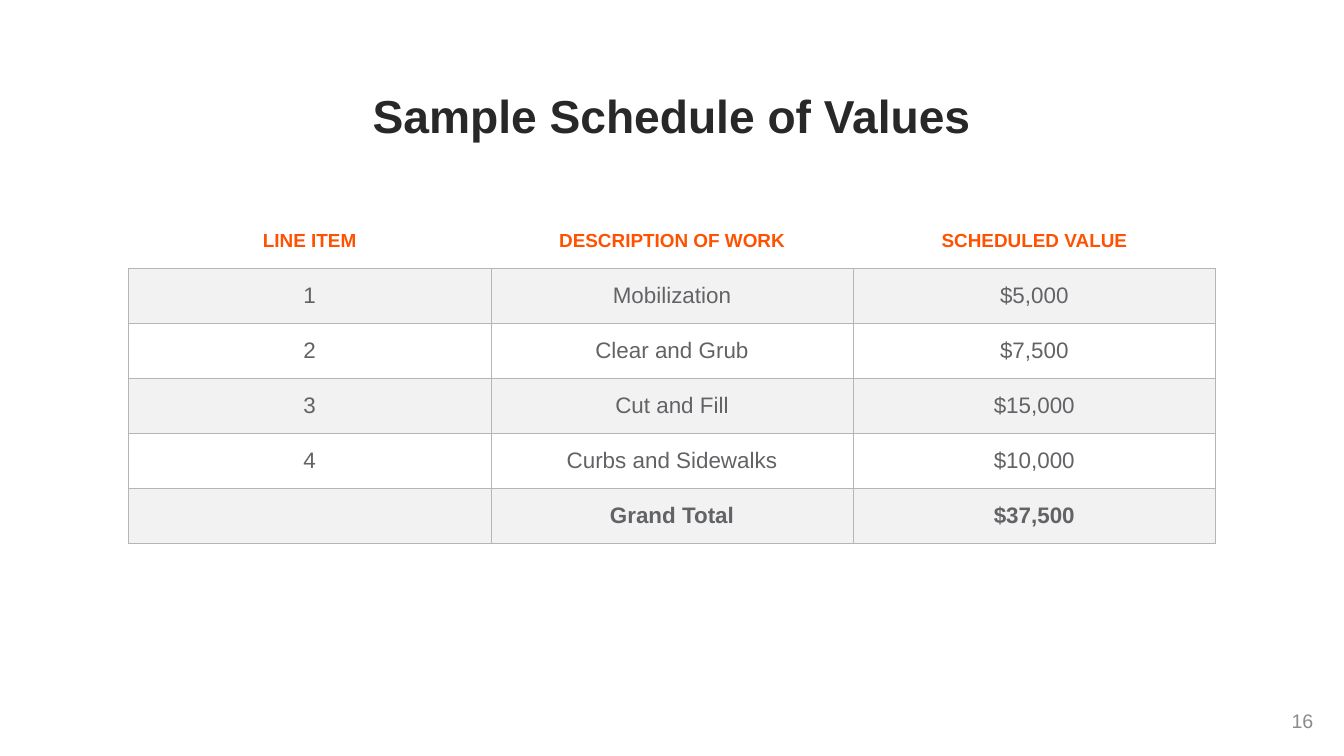
from lxml import etree
from pptx import Presentation
from pptx.dml.color import RGBColor
from pptx.enum.text import MSO_ANCHOR, PP_ALIGN
from pptx.oxml.ns import qn
from pptx.util import Inches, Pt

CENTER, RIGHT = PP_ALIGN.CENTER, PP_ALIGN.RIGHT
TOP, MIDDLE = MSO_ANCHOR.TOP, MSO_ANCHOR.MIDDLE
TITLE_ONLY = 5

COLORS = {
    "title": "282828",
    "header": "FF5200",
    "body": "626366",
    "number": "8B8B8B",
    "border": "B5B6B4",
    "band": "F2F2F2",
    "white": "FFFFFF",
}

HEADERS = ["LINE ITEM", "DESCRIPTION OF WORK", "SCHEDULED VALUE"]
ITEMS = [
    ["1", "Mobilization", "$5,000"],
    ["2", "Clear and Grub", "$7,500"],
    ["3", "Cut and Fill", "$15,000"],
    ["4", "Curbs and Sidewalks", "$10,000"],
    ["", "Grand Total", "$37,500"],
]


def rgb(name):
    return RGBColor.from_string(COLORS[name])


def write(tf, text, size, color, bold=False, align=CENTER, spacing=None, font="Arial"):
    p = tf.paragraphs[0]
    p.alignment = align
    if spacing:
        p.line_spacing = spacing
    p.font.size = Pt(size)
    if text:
        r = p.add_run()
        r.text = text
        r.font.name = font
        r.font.size = Pt(size)
        r.font.bold = bold
        r.font.color.rgb = rgb(color)


def set_borders(cell, sides, width=1):
    """Draw the named sides (L, R, T, B) and clear the others."""
    tc_pr = cell._tc.get_or_add_tcPr()
    for side in "LRTB":
        ln = etree.SubElement(tc_pr, qn(f"a:ln{side}"), w=str(Pt(width)))
        if side in sides:
            fill = etree.SubElement(ln, qn("a:solidFill"))
            etree.SubElement(fill, qn("a:srgbClr"), val=COLORS["border"])
        else:
            etree.SubElement(ln, qn("a:noFill"))


class SlideBuilder:
    def __init__(self, prs):
        self.slide = prs.slides.add_slide(prs.slide_layouts[TITLE_ONLY])
        fill = self.slide.background.fill
        fill.solid()
        fill.fore_color.rgb = rgb("white")

    def title(self, text, left, top, width, height):
        sp = self.slide.shapes.title
        sp.left, sp.top = Inches(left), Inches(top)
        sp.width, sp.height = Inches(width), Inches(height)
        tf = sp.text_frame
        tf.word_wrap = True
        tf.vertical_anchor = TOP
        write(tf, text, 66, "title", bold=True, spacing=0.9)

    def page_number(self, text, left, top, width, height):
        box = self.slide.shapes.add_textbox(
            Inches(left), Inches(top), Inches(width), Inches(height))
        tf = box.text_frame
        tf.word_wrap = True
        tf.vertical_anchor = MIDDLE
        write(tf, text, 28, "number", align=RIGHT)

    def table(self, rows, left, top, col_width, row_height):
        """Add a table with an open header, banded rows and a bold total row."""
        n_rows, n_cols = len(rows), len(rows[0])
        table = self.slide.shapes.add_table(
            n_rows, n_cols, Inches(left), Inches(top),
            Inches(col_width * n_cols), Inches(row_height * n_rows)).table
        for i, row in enumerate(rows):
            for j, text in enumerate(row):
                cell = table.cell(i, j)
                cell.margin_left = cell.margin_right = Inches(0.3)
                cell.margin_top = cell.margin_bottom = Inches(0.2)
                cell.vertical_anchor = MIDDLE
                set_borders(cell, "LRTB" if i else "B")
                cell.fill.solid()
                cell.fill.fore_color.rgb = rgb("band" if i % 2 else "white")
                if i == 0:
                    write(cell.text_frame, text, 27, "header", bold=True)
                else:
                    write(cell.text_frame, text, 32, "body", bold=i == n_rows - 1)


def main():
    prs = Presentation()
    prs.slide_width, prs.slide_height = Inches(26.67), Inches(15)
    s = SlideBuilder(prs)
    s.title("Sample Schedule of Values", 1.83, 1.81, 23, 1.23)
    s.page_number("16", 20.16, 13.9, 6, 0.8)
    s.table([HEADERS] + ITEMS, 2.55, 4.24, col_width=7.19, row_height=1.09)
    prs.save("out.pptx")


if __name__ == "__main__":
    main()
